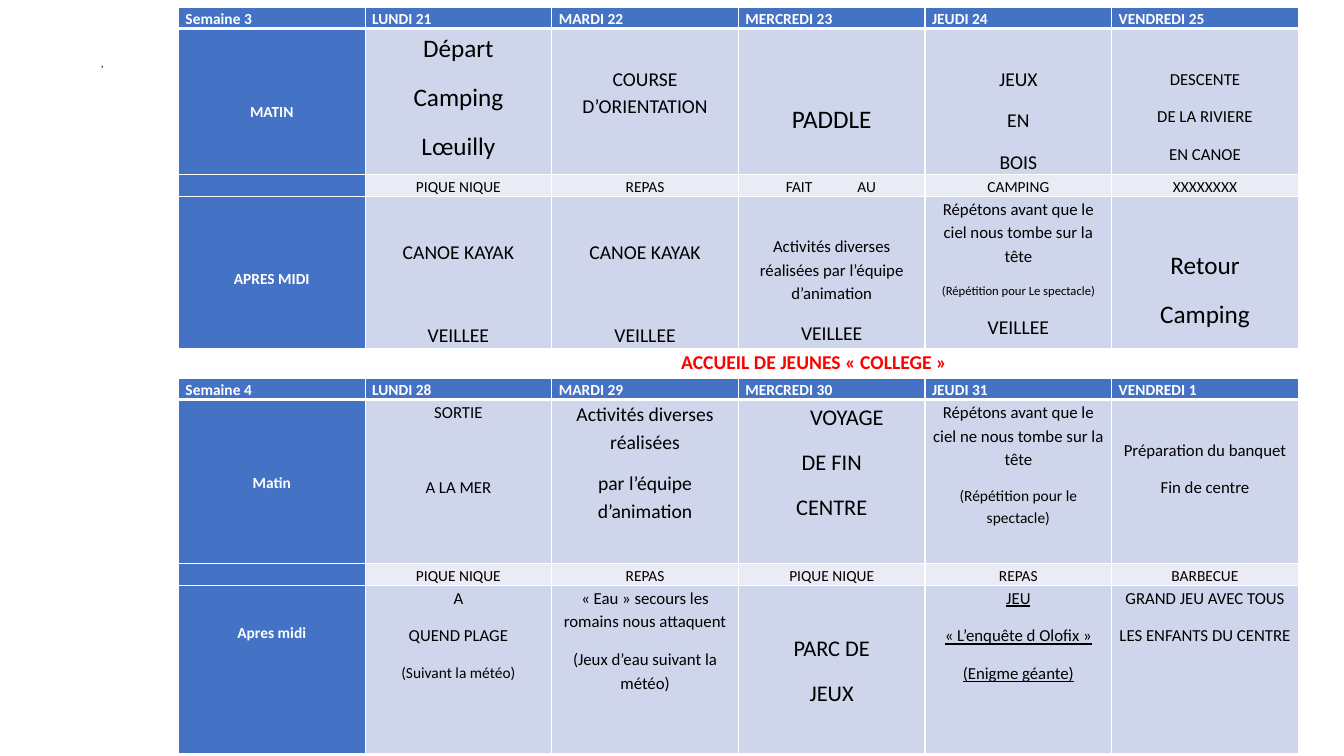
from dataclasses import dataclass

from lxml.etree import SubElement
from pptx import Presentation
from pptx.dml.color import RGBColor
from pptx.enum.text import MSO_ANCHOR, PP_ALIGN
from pptx.oxml.ns import qn
from pptx.util import Inches, Pt

WIDE, HIGH = Inches(13.33), Inches(7.5)
COL, ROW = WIDE / 100, HIGH / 100
LEFT, SPAN = 13.28, 13.89
FONT = "Calibri"
SIDE = Inches(0.07)
GAP = 10
WHITE = RGBColor(0xFF, 0xFF, 0xFF)
BLACK = RGBColor(0, 0, 0)
RED = RGBColor(0xFF, 0, 0)
BLUE = RGBColor(0x44, 0x72, 0xC4)
PALE = RGBColor(0xCF, 0xD5, 0xEA)
LIGHT = RGBColor(0xE9, 0xEB, 0xF5)


@dataclass
class Line:
    text: str
    size: int = 11
    after: float = GAP
    under: bool = False
    shift: float = 0
    tab: float = 0


@dataclass
class Cell:
    lines: list
    top: float = 0
    left: float = 0


def skip(size, count=1):
    return count * (size * 1.4 + GAP)


def same(size, *texts, top=0, under=False):
    return Cell([Line(text, size, under=under) for text in texts], top)


def style(para, size, color, bold=False):
    font = para.font
    font.name, font.size, font.bold = FONT, Pt(size), bold
    font.color.rgb = color


def add_tab(para, place):
    props = para._p.get_or_add_pPr()
    stops = SubElement(props, qn("a:tabLst"))
    SubElement(stops, qn("a:tab"), pos=str(Inches(place)), algn="l")
    props.find(qn("a:defRPr")).addprevious(stops)


def add_edge(box):
    props = box._tc.get_or_add_tcPr()
    edge = SubElement(props, qn("a:lnB"), w=str(Pt(3)))
    paint = SubElement(edge, qn("a:solidFill"))
    SubElement(paint, qn("a:srgbClr"), val=str(WHITE))
    props.insert(0, edge)


def write(para, line, color, bold, align):
    para.text = line.text
    para.alignment = PP_ALIGN.LEFT if line.tab else align
    para.line_spacing = 1.15
    para.space_after = Pt(line.after)
    style(para, line.size, color, bold)
    if line.under:
        para.font.underline = True
    if line.shift:
        para._p.get_or_add_pPr().set("marL", str(Inches(line.shift)))
    if line.tab:
        add_tab(para, line.tab)


def fill_cell(box, cell, fill, color, bold, align):
    box.fill.solid()
    box.fill.fore_color.rgb = fill
    box.margin_left = SIDE + Inches(cell.left)
    box.margin_right = SIDE
    box.margin_top, box.margin_bottom = Pt(cell.top), 0
    frame = box.text_frame
    for i, line in enumerate(cell.lines):
        para = frame.add_paragraph() if i else frame.paragraphs[0]
        write(para, line, color, bold, align)


def add_week(slide, top, rows, data):
    count = len(data[0])
    frame = slide.shapes.add_table(
        len(data), count, int(LEFT * COL), int(top * ROW),
        int(count * SPAN * COL), int(sum(rows) * ROW))
    table = frame.table
    table.first_col = True
    for col in table.columns:
        col.width = int(SPAN * COL)
    for r, cells in enumerate(data):
        table.rows[r].height = int(rows[r] * ROW)
        for c, cell in enumerate(cells):
            head = r == 0 or c == 0
            fill = BLUE if head else LIGHT if r == 2 else PALE
            fill_cell(table.cell(r, c), cell, fill, WHITE if head else BLACK,
                      head, PP_ALIGN.CENTER if r else PP_ALIGN.LEFT)
            if r == 0:
                add_edge(table.cell(r, c))


def add_text(slide, left, top, width, height, text, size, color,
             bold=False, align=PP_ALIGN.LEFT):
    box = slide.shapes.add_textbox(
        int(left * COL), int(top * ROW), int(width * COL), int(height * ROW))
    frame = box.text_frame
    frame.word_wrap = False
    frame.vertical_anchor = MSO_ANCHOR.MIDDLE
    para = frame.paragraphs[0]
    para.text, para.alignment = text, align
    style(para, size, color, bold)


def plain(*texts):
    return [same(11, text) for text in texts]


def main():
    deck = Presentation()
    deck.slide_width, deck.slide_height = WIDE, HIGH
    slide = deck.slides.add_slide(deck.slide_layouts[6])

    kayak = Cell([Line("CANOE KAYAK", 14, GAP + skip(14)), Line("VEILLEE", 14)],
                 skip(14))
    camp = [
        plain("Semaine 3", "LUNDI 21", "MARDI 22", "MERCREDI 23", "JEUDI 24",
              "VENDREDI 25"),
        [same(11, "MATIN", top=skip(11, 2)),
         same(18, "Départ", "Camping", "Lœuilly"),
         same(14, "COURSE D’ORIENTATION", top=skip(11)),
         same(18, "PADDLE", top=skip(11, 2)),
         same(14, "JEUX", "EN", "BOIS", top=skip(11)),
         same(12, "DESCENTE", "DE LA RIVIERE", "EN CANOE", top=skip(12))],
        plain("", "PIQUE NIQUE", "REPAS")
        + [Cell([Line("FAIT\tAU", tab=0.71)], left=0.4)]
        + plain("CAMPING", "XXXXXXXX"),
        [same(11, "APRES MIDI", top=skip(11, 2)),
         kayak,
         kayak,
         Cell([Line("Activités diverses réalisées par l’équipe d’animation", 12),
               Line("VEILLEE", 14)], skip(12)),
         Cell([Line("Répétons avant que le ciel nous tombe sur la tête", 12),
               Line("(Répétition pour Le spectacle)", 9),
               Line("VEILLEE", 14)]),
         same(18, "Retour", "Camping", top=skip(18))],
    ]
    feast = [
        plain("Semaine 4", "LUNDI 28", "MARDI 29", "MERCREDI 30", "JEUDI 31",
              "VENDREDI 1"),
        [same(11, "Matin", top=skip(11, 2)),
         Cell([Line("SORTIE", 12, GAP + skip(12)), Line("A LA MER", 12)]),
         same(14, "Activités diverses réalisées", "par l’équipe d’animation"),
         Cell([Line("VOYAGE", 16, shift=0.3), Line("DE FIN", 16),
               Line("CENTRE", 16)]),
         Cell([Line("Répétons avant que le ciel ne nous tombe sur la tête", 12),
               Line("(Répétition pour le spectacle)")]),
         same(12, "Préparation du banquet", "Fin de centre", top=skip(12))],
        plain("", "PIQUE NIQUE", "REPAS", "PIQUE NIQUE", "REPAS", "BARBECUE"),
        [same(11, "Apres midi", top=skip(11)),
         Cell([Line("A", 12), Line("QUEND PLAGE", 12),
               Line("(Suivant la météo)")]),
         same(12, "« Eau » secours les romains nous attaquent",
              "(Jeux d’eau suivant la météo)"),
         same(16, "PARC DE", "JEUX", top=skip(16)),
         same(12, "JEU", "« L’enquête d Olofix »", "(Enigme géante)", under=True),
         same(12, "GRAND JEU AVEC TOUS", "LES ENFANTS DU CENTRE")],
    ]

    add_text(slide, 6.9, 5.33, 1.35, 6.13, ",", 8, BLACK)
    add_week(slide, 0.93, [2.86, 19.32, 2.86, 20.12], camp)
    add_week(slide, 50, [2.86, 21.73, 2.86, 22.27], feast)
    add_text(slide, 10.58, 44.53, 100, 6.67, "ACCUEIL DE JEUNES « COLLEGE »",
             14, RED, True, PP_ALIGN.CENTER)
    deck.save("out.pptx")


if __name__ == "__main__":
    main()
